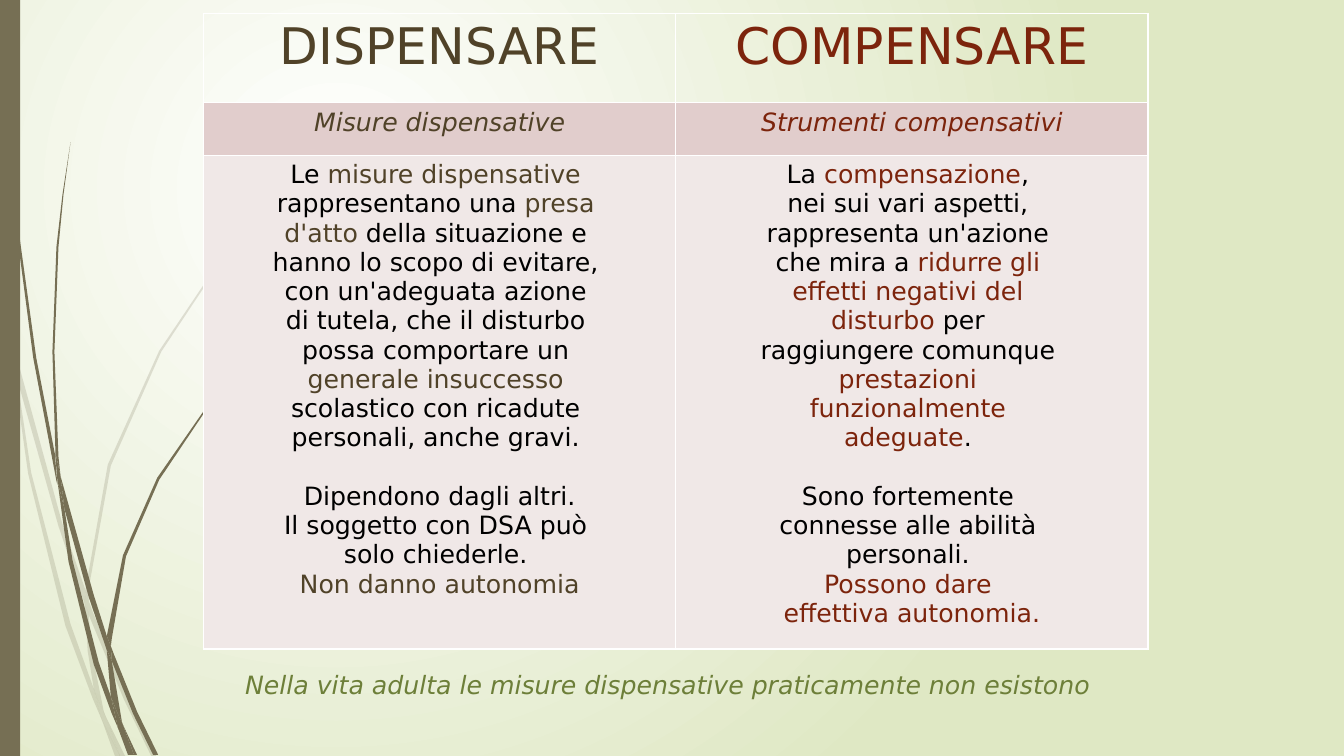
from pptx import Presentation
from pptx.util import Pt
from pptx.dml.color import RGBColor
from pptx.enum.shapes import MSO_SHAPE as SHAPE
from pptx.enum.text import PP_ALIGN as ALIGN, MSO_ANCHOR as ANCHOR
from pptx.oxml import parse_xml
from pptx.oxml.ns import nsdecls
from lxml.etree import SubElement

FONT, STEM, BLACK, WHITE = "DejaVu Sans", "766F54", "000000", "FFFFFF"
A_NS = "{http://schemas.openxmlformats.org/drawingml/2006/main}"
GRID = 0.72
LINE_GAP = 20.95

PALE_BLADES = [
    [(11, 350), (9, 322), (0, 282), (0, 299), (10, 344)],
    [(58, 522), (84, 599), (85, 586), (62, 520), (14, 345), (17, 376)],
    [(92, 607), (88, 596), (88, 610), (123, 694), (150, 750), (155, 750), (127, 692)],
    [(119, 750), (124, 750), (105, 711)],
    [(93, 683), (70, 619), (31, 469), (17, 376), (11, 350), (28, 470), (65, 621),
     (92, 693), (101, 714), (99, 707)],
    [(84, 599), (87, 646), (93, 683), (96, 692), (105, 711), (103, 706), (91, 646),
     (88, 610), (88, 608)],
    [(88, 584), (110, 462), (160, 349), (229, 245), (268, 198), (290, 175), (312, 154),
     (312, 153), (289, 175), (268, 197), (228, 244), (158, 348), (107, 461), (85, 584),
     (85, 586), (88, 596)],
    [(101, 714), (114, 750), (119, 750)],
    [(88, 608), (88, 610), (88, 596), (85, 586), (84, 599)],
    [(96, 692), (93, 683), (99, 707), (101, 714), (119, 750), (105, 711)],
]
DARK_BLADES = [
    [(7, 110), (17, 233), (33, 355), (56, 477), (57, 481), (55, 457), (55, 453),
     (36, 355), (19, 232), (8, 109), (5, 48), (4, 0), (3, 0), (4, 48)],
    [(88, 592), (106, 645), (106, 633), (106, 631), (93, 590), (60, 472), (64, 505)],
    [(113, 649), (110, 641), (111, 656), (132, 708), (152, 749), (157, 749), (136, 706)],
    [(110, 691), (98, 657), (72, 556), (64, 505), (57, 477), (68, 557), (93, 659),
     (111, 708), (117, 722), (116, 717)],
    [(60, 472), (58, 453), (54, 349), (58, 245), (63, 193), (70, 141), (62, 193),
     (56, 245), (52, 349), (55, 449)],
    [(133, 749), (136, 749), (122, 719)],
    [(57, 477), (64, 505), (60, 472), (55, 449), (55, 453)],
    [(111, 633), (125, 552), (158, 476), (205, 406), (231, 374), (245, 359), (261, 344),
     (260, 344), (245, 358), (231, 373), (204, 405), (156, 474), (122, 551), (106, 631),
     (110, 641)],
    [(117, 722), (127, 749), (131, 749)],
    [(106, 645), (110, 691), (116, 706), (122, 719), (121, 716), (111, 656), (109, 651)],
    [(106, 645), (109, 651), (111, 656), (110, 641), (106, 631), (106, 633)],
    [(116, 706), (110, 691), (116, 717), (117, 722), (130, 749), (133, 749), (122, 719)],
]

COLUMNS = [
    ("504228", "DISPENSARE", "Misure dispensative", [
        "Le *misure dispensative ", "rappresentano una *presa ",
        "*d'atto* della situazione e ", "hanno lo scopo di evitare, ",
        "con un'adeguata azione ", "di tutela, che il disturbo ",
        "possa comportare un ", "*generale insuccesso ",
        "scolastico con ricadute ", "personali, anche gravi. "], [
        "Dipendono dagli altri.", "Il soggetto con DSA può ", "solo chiederle. ",
        "*Non danno autonomia"]),
    ("7C240C", "COMPENSARE", "Strumenti compensativi", [
        "La *compensazione*, ", "nei sui vari aspetti, ", "rappresenta un'azione ",
        "che mira a *ridurre gli ", "*effetti negativi del ", "*disturbo* per ",
        "raggiungere comunque ", "*prestazioni ", "*funzionalmente ",
        "*adeguate*. "], [
        "Sono fortemente ", "connesse alle abilità ", "personali. ",
        "*Possono dare ", "*effettiva autonomia."]),
]
TABLE_BOX = (145.44, 9.36, 674.64, 454.32)
ROWS = [(64.08, None, dict(size=Pt(36), italic=False)),
        (37.44, "E1CDCC", dict(size=Pt(18), italic=True)),
        (352.8, "F0E8E7", dict(size=Pt(18), italic=False))]
NOTE = "Nella vita adulta le misure dispensative praticamente non esistono"
NOTE_BOX = (145.44, 474.48, 663.12, 28.8)


def rgb(color):
    """Turn a hex string into a colour."""
    return RGBColor.from_string(color)


def paint(sp, color, alpha=None):
    """Fill a shape plainly, optionally with an opacity in percent."""
    sp.shadow.inherit = False
    sp.line.fill.background()
    sp.fill.solid()
    sp.fill.fore_color.rgb = rgb(color)
    if alpha:
        clr = sp.element.spPr.find(f"{A_NS}solidFill/{A_NS}srgbClr")
        SubElement(clr, A_NS + "alpha", val=str(alpha * 1000))


def write(p, text, accent, fmt):
    """Write a centred line whose asterisks switch the accent colour."""
    p.alignment = ALIGN.CENTER
    for i, part in enumerate(text.split("*")):
        if part:
            r = p.add_run()
            r.text = part
            r.font.color.rgb = rgb(accent if i % 2 else BLACK)
            for name, value in dict(fmt, name=FONT).items():
                setattr(r.font, name, value)


def style_cell(cell, fill):
    """Give a cell white edges and its fill."""
    tcPr = cell._tc.get_or_add_tcPr()
    for side in "LRTB":
        ln = SubElement(tcPr, f"{A_NS}ln{side}", w=str(Pt(1)))
        SubElement(SubElement(ln, A_NS + "solidFill"), A_NS + "srgbClr", val=WHITE)
    if fill:
        cell.fill.solid()
        cell.fill.fore_color.rgb = rgb(fill)
    else:
        cell.fill.background()


def add_background(s):
    """Set the round gradient behind the slide."""
    stops = "".join(f'<a:gs pos="{pos}"><a:srgbClr val="{color}"/></a:gs>'
                    for pos, color in ((0, WHITE), (100000, "DFE8C4")))
    s.element.cSld.insert(0, parse_xml(
        f'<p:bg {nsdecls("p", "a")}><p:bgPr><a:gradFill rotWithShape="1">'
        f'<a:gsLst>{stops}</a:gsLst><a:path path="circle">'
        '<a:fillToRect l="50000" t="50000" r="100000" b="100000"/></a:path>'
        '</a:gradFill><a:effectLst/></p:bgPr></p:bg>'))


def add_grass(s, height):
    """Draw the grass blades and the left band."""
    for blades, alpha in ((PALE_BLADES, 20), (DARK_BLADES, None)):
        for start, *rest in blades:
            ff = s.shapes.build_freeform(*start, scale=Pt(GRID))
            ff.add_line_segments(rest, close=True)
            paint(ff.convert_to_shape(), STEM, alpha)
    paint(s.shapes.add_shape(SHAPE.RECTANGLE, 0, 0, Pt(14.4), height), STEM)


def add_comparison(s):
    """Build the two-column table."""
    table = s.shapes.add_table(len(ROWS), len(COLUMNS), *map(Pt, TABLE_BOX)).table
    table.first_row = table.horz_banding = False
    for c, (accent, title, subtitle, body, ending) in enumerate(COLUMNS):
        table.columns[c].width = Pt(TABLE_BOX[2] / len(COLUMNS))
        texts = ["*" + title], ["*" + subtitle], body + ending
        for r, ((height, fill, fmt), lines) in enumerate(zip(ROWS, texts)):
            table.rows[r].height = Pt(height)
            cell = table.cell(r, c)
            style_cell(cell, fill)
            tf = cell.text_frame
            for i, line in enumerate(lines):
                p = tf.add_paragraph() if i else tf.paragraphs[0]
                write(p, line, accent, fmt)
                if i == len(body):
                    p.space_before = Pt(LINE_GAP)


def add_note(s):
    """Add the closing line under the table."""
    tf = s.shapes.add_textbox(*map(Pt, NOTE_BOX)).text_frame
    tf.word_wrap = True
    tf.vertical_anchor = ANCHOR.TOP
    write(tf.paragraphs[0], "*" + NOTE, "6D7F39", dict(size=Pt(18), italic=True))


def main():
    """Build and save the slide."""
    prs = Presentation()
    prs.slide_width, prs.slide_height = Pt(960), Pt(540)
    s = prs.slides.add_slide(prs.slide_layouts[6])
    add_background(s)
    add_grass(s, prs.slide_height)
    add_comparison(s)
    add_note(s)
    prs.save("out.pptx")


if __name__ == "__main__":
    main()
